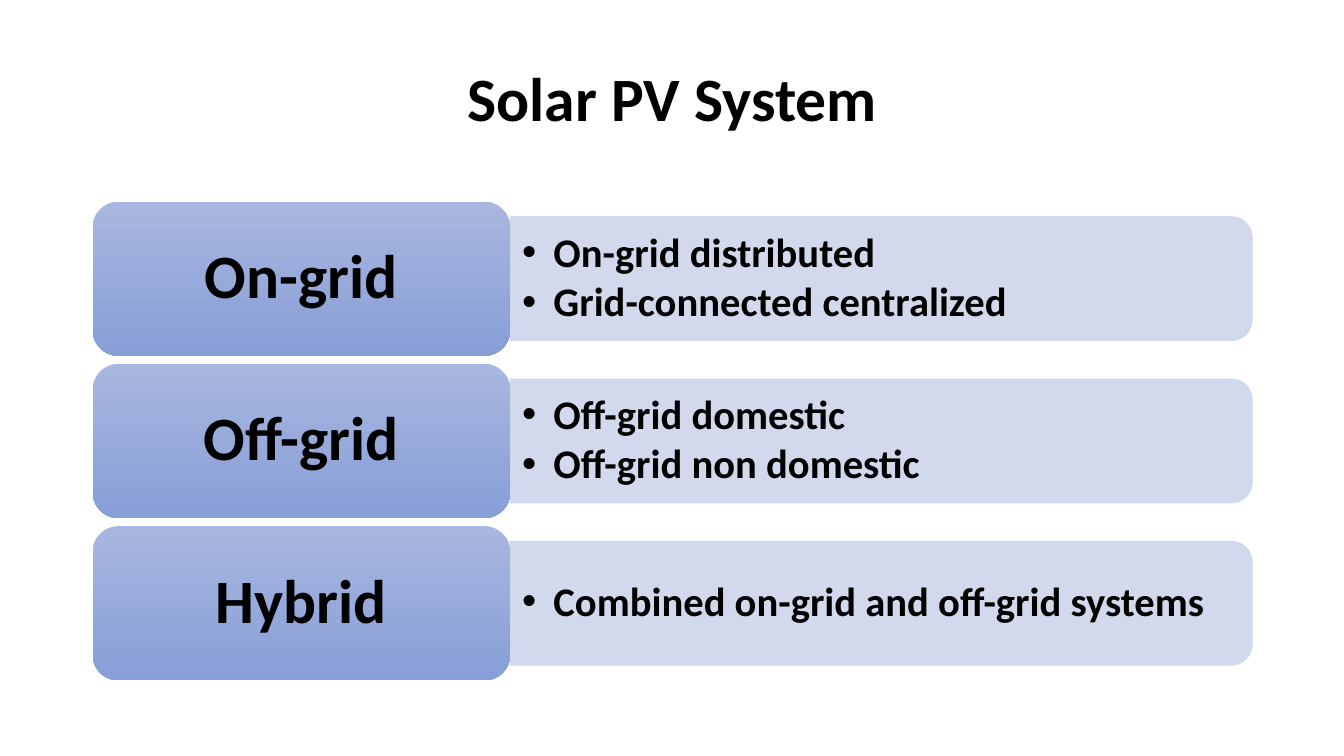
from lxml.etree import SubElement
from pptx import Presentation
from pptx.dml.color import RGBColor
from pptx.enum.shapes import MSO_SHAPE
from pptx.enum.text import MSO_ANCHOR, PP_ALIGN
from pptx.oxml.ns import qn
from pptx.util import Inches, Pt

COLORS = {"text": "000000", "panel": "CFD5EA", "top": "A8B7DF", "base": "889ED7"}
FONT = {"name": "Calibri", "bold": True}
ROWS = [
    ("On-grid", ["On-grid distributed", "Grid-connected centralized"]),
    ("Off-grid", ["Off-grid domestic", "Off-grid non domestic"]),
    ("Hybrid", ["Combined on-grid and off-grid systems"]),
]
LEFT, TOP, STEP = 0.92, 2, 1.61
LABEL_W, LABEL_H = 4.14, 1.53
PANEL_W, PANEL_H = 7.36, 1.23


def color(name):
    return RGBColor.from_string(COLORS[name])


def apply(target, values):
    for key, value in values.items():
        setattr(target, key, value)


def write(shape, lines, size, align, inset):
    frame = shape.text_frame
    apply(frame, {
        "word_wrap": True, "vertical_anchor": MSO_ANCHOR.MIDDLE,
        "margin_left": Inches(inset), "margin_right": Inches(inset),
        "margin_top": Inches(inset / 2), "margin_bottom": Inches(inset / 2),
    })
    frame.text = "\n".join(lines)
    for para in frame.paragraphs:
        apply(para, {"alignment": align, "line_spacing": 0.9})
        font = para.runs[0].font
        apply(font, {**FONT, "size": Pt(size)})
        font.color.rgb = color("text")
    return frame


def add_text(slide, box, lines, size, align, inset):
    shape = slide.shapes.add_textbox(*map(Inches, box))
    return write(shape, lines, size, align, inset)


def add_bullets(frame):
    for para in frame.paragraphs:
        apply(para, {"level": 1, "space_after": Pt(4)})
        props = para._p.get_or_add_pPr()
        props.set("marL", str(Inches(0.31)))
        props.set("indent", str(Inches(-0.31)))
        SubElement(props, qn("a:buFont")).set("typeface", "Arial")
        SubElement(props, qn("a:buChar")).set("char", "•")


def add_panel(slide, left, mid):
    """Draw a bar with rounded right corners, centred on height mid."""
    box = (left + (PANEL_W - PANEL_H) / 2, mid - PANEL_W / 2, PANEL_H, PANEL_W)
    panel = slide.shapes.add_shape(MSO_SHAPE.ROUND_2_SAME_RECTANGLE, *map(Inches, box))
    apply(panel, {"rotation": 90})
    panel.shadow.inherit = False
    panel.line.width = Pt(0.5)
    for fill in (panel.fill, panel.line.fill):
        fill.solid()
        fill.fore_color.rgb = color("panel")
    for tint in panel._element.spPr.iter(qn("a:srgbClr")):
        SubElement(tint, qn("a:alpha")).set("val", "90000")


def add_label(slide, top, name):
    box = (LEFT, top, LABEL_W, LABEL_H)
    label = slide.shapes.add_shape(MSO_SHAPE.ROUNDED_RECTANGLE, *map(Inches, box))
    label.shadow.inherit = False
    label.line.fill.background()
    label.fill.gradient()
    label.fill.gradient_angle = 270
    for stop, shade in zip(label.fill.gradient_stops, ("top", "base")):
        stop.color.rgb = color(shade)
    write(label, [name], 44, PP_ALIGN.CENTER, 0.18)


def add_row(slide, top, name, points):
    left, mid = LEFT + LABEL_W, top + LABEL_H / 2
    add_panel(slide, left, mid)
    box = (left, mid - 0.555, 7.3, 1.11)
    add_bullets(add_text(slide, box, points, 29, PP_ALIGN.LEFT, 0.12))
    add_label(slide, top, name)


def main():
    deck = Presentation()
    apply(deck, {"slide_width": Inches(13.33), "slide_height": Inches(7.5)})
    slide = deck.slides.add_slide(deck.slide_layouts[6])
    add_text(slide, (LEFT, 0.61, 11.5, 0.79), ["Solar PV System"], 44, PP_ALIGN.CENTER, 0.1)
    for index, (name, points) in enumerate(ROWS):
        add_row(slide, TOP + index * STEP, name, points)
    deck.save("out.pptx")


if __name__ == "__main__":
    main()
